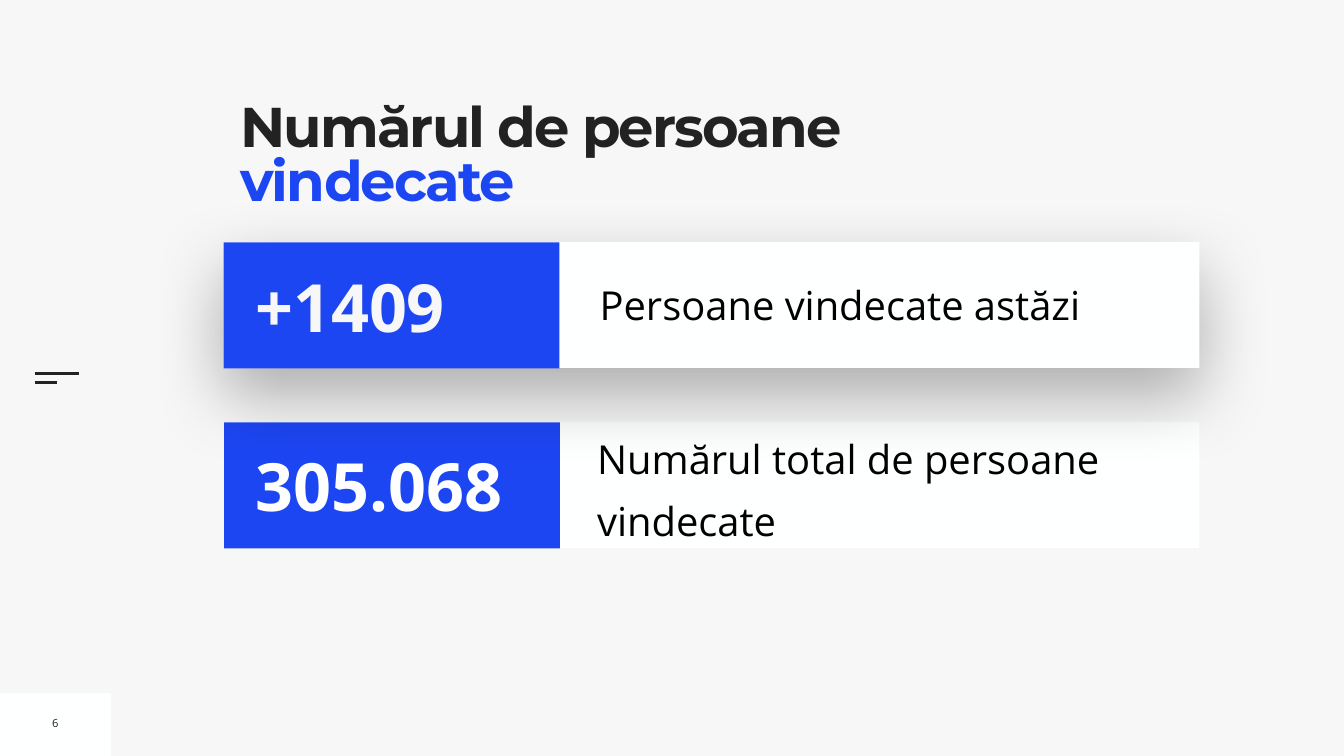
"""Build the slide with the counts of recovered people."""
from lxml.etree import SubElement
from pptx import Presentation
from pptx.dml.color import RGBColor
from pptx.enum.shapes import MSO_CONNECTOR, MSO_SHAPE
from pptx.enum.text import MSO_ANCHOR, MSO_AUTO_SIZE, PP_ALIGN
from pptx.oxml import parse_xml
from pptx.oxml.ns import nsdecls, qn
from pptx.util import Inches, Pt

BLUE = RGBColor(0x1D, 0x46, 0xF3)
DARK = RGBColor(0x22, 0x22, 0x22)
PALE = RGBColor(0xF7, 0xF7, 0xF7)
PANEL = RGBColor(0xFE, 0xFF, 0xFF)
WHITE = RGBColor(0xFF, 0xFF, 0xFF)
BLACK = RGBColor(0, 0, 0)

SHADOW = f"""<a:effectLst {nsdecls('a')}>
  <a:outerShdw blurRad="{Pt(100)}" dist="{Pt(40)}" dir="5400000" rotWithShape="0">
    <a:srgbClr val="000000"><a:alpha val="30000"/></a:srgbClr>
  </a:outerShdw>
</a:effectLst>"""


def add_box(left, top, width, height, color):
    box = slide.shapes.add_shape(
        MSO_SHAPE.RECTANGLE, Inches(left), Inches(top), Inches(width), Inches(height))
    box.shadow.inherit = False
    box.fill.solid()
    box.fill.fore_color.rgb = color
    box.line.fill.background()
    return box


def add_label(text, left, top, width, height, size, color, bold=False, inset=0.1):
    label = slide.shapes.add_textbox(
        Inches(left), Inches(top), Inches(width), Inches(height))
    frame = label.text_frame
    frame.word_wrap = True
    frame.vertical_anchor = MSO_ANCHOR.MIDDLE
    frame.margin_left = frame.margin_right = Inches(inset)
    frame.margin_top = frame.margin_bottom = Inches(inset)
    run = frame.paragraphs[0].add_run()
    run.text = text
    run.font.name = "Open Sans"
    run.font.size = Pt(size)
    run.font.bold = bold
    run.font.color.rgb = color
    return frame


deck = Presentation()
deck.slide_width = Inches(26.67)
deck.slide_height = Inches(15)
slide = deck.slides.add_slide(deck.slide_layouts[5])
slide.background.fill.solid()
slide.background.fill.fore_color.rgb = PALE

title = slide.shapes.title
title.left, title.top = Inches(4.77), Inches(2.07)
title.width, title.height = Inches(13.01), Inches(2.73)
title.fill.solid()
title.fill.fore_color.rgb = PALE
frame = title.text_frame
frame.word_wrap = True
frame.auto_size = MSO_AUTO_SIZE.NONE
frame.vertical_anchor = MSO_ANCHOR.TOP
frame.margin_left = frame.margin_right = 0
frame.margin_top = frame.margin_bottom = 0
line = frame.paragraphs[0]
line.alignment = PP_ALIGN.LEFT
line.line_spacing = 0.8
for text, color in (("Numărul de persoane ", DARK), ("vindecate", BLUE)):
    run = line.add_run()
    run.text = text
    run.font.name = "Montserrat"
    run.font.size = Pt(80)
    run.font.bold = True
    run.font.color.rgb = color
    run.font._element.set("spc", "-270")

add_box(0, 13.76, 2.2, 1.24, PANEL)
for right, top in ((1.57, 7.41), (1.13, 7.59)):
    rule = slide.shapes.add_connector(
        MSO_CONNECTOR.STRAIGHT, Inches(0.69), Inches(top), Inches(right), Inches(top))
    rule.line.color.rgb = DARK
    rule.line.width = Pt(3)
    SubElement(rule._element.spPr, qn("a:effectLst"))

page = add_label("6", 0.93, 14.09, 0.34, 0.51, 16, DARK)
page.word_wrap = False
page.paragraphs[0].alignment = PP_ALIGN.CENTER

cards = (
    (4.45, 8.37, "305.068", WHITE, False),
    (4.44, 4.8, "+1409", PALE, True),
)
for left, top, count, color, raised in cards:
    panel = add_box(left, top, 23.8 - left, 2.5, PANEL)
    if raised:
        spot = panel._element.spPr
        spot.remove(spot.find(qn("a:effectLst")))
        spot.append(parse_xml(SHADOW))
        add_label("Persoane vindecate astăzi", 11.8, 5.47, 11.76, 1.16, 57, BLACK)
    else:
        total = add_label("Numărul total de persoane vindecate",
                          11.85, 8.39, 11.95, 2.36, 57, BLACK, inset=0)
        total.paragraphs[0].line_spacing = 1.3
        total.paragraphs[0].space_before = Pt(20)
    add_box(left, top + 0.01, 6.66, 2.5, BLUE)
    add_label(count, left + 0.53, top + 0.36, 6.03, 1.8, 95, color, bold=True)

deck.save("out.pptx")
